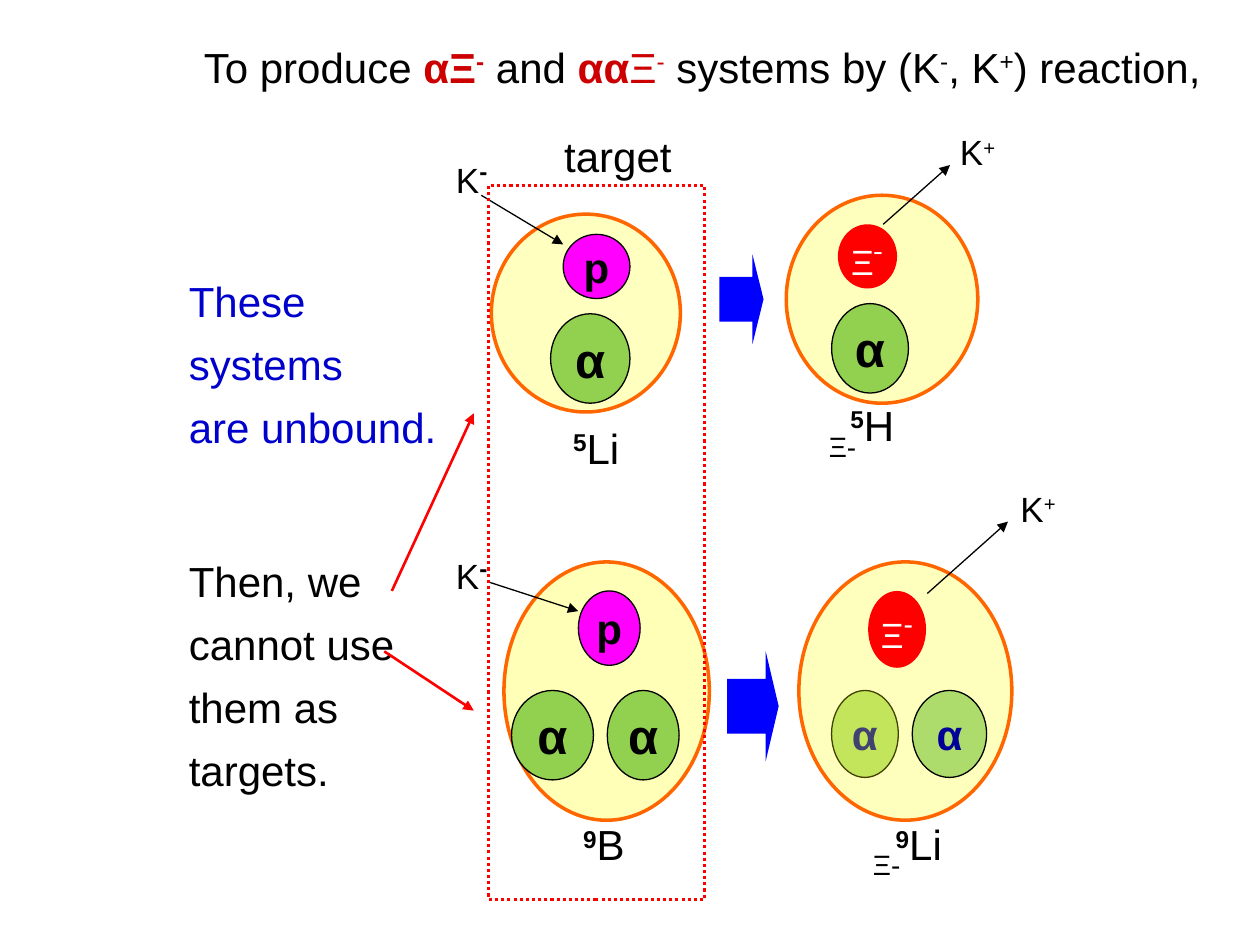
import dataclasses

import pptx
import pptx.dml.color
import pptx.enum.dml
import pptx.enum.shapes
import pptx.enum.text
import pptx.oxml.ns
import pptx.oxml.xmlchemy
import pptx.util

MSO = pptx.enum.shapes.MSO_SHAPE
ALIGN = pptx.enum.text.PP_ALIGN
ANCHOR = pptx.enum.text.MSO_ANCHOR
CELL = pptx.util.Inches(0.1)  # square grid: 100 columns by 75 rows


@dataclasses.dataclass(frozen=True)
class Theme:
    font: str = "Arial"
    minus_font: str = "Noto Sans CJK JP"
    black: str = "000000"
    white: str = "FFFFFF"
    emphasis: str = "CC0000"
    note: str = "0000CC"
    residue: str = "000099"
    red: str = "FF0000"
    blue: str = "0000FF"
    shell: str = "FFFF00"
    shell_line: str = "FF6600"
    alpha: str = "92D050"
    proton: str = "FF00FF"
    small: int = 16
    kaon: int = 20
    body: int = 24
    large: int = 28


T = Theme()


def rgb(code):
    return pptx.dml.color.RGBColor.from_string(code)


def cells(*values):
    return [round(v * CELL) for v in values]


def add_xml(parent, tag, **attributes):
    child = pptx.oxml.xmlchemy.OxmlElement(tag)
    for name, value in attributes.items():
        child.set(name, str(value))
    parent.append(child)


def sup(text, **fmt):
    """A superscript run."""
    return text, dict(fmt, base=30)


def add_run(p, text, size=T.body, color=T.black, bold=False, font=T.font, base=0):
    r = p.add_run()
    r.text = text
    r.font.size = pptx.util.Pt(size)
    r.font.name = font
    r.font.bold = bold
    r.font.color.rgb = rgb(color)
    if base:
        r._r.get_or_add_rPr().set("baseline", str(base * 1000))


def write(tf, paragraphs, align=ALIGN.LEFT, spacing=None, before=(), wrap=False, **fmt):
    """Fill a frame; each paragraph lists strings or (string, format) runs."""
    tf.word_wrap = wrap
    for i, runs in enumerate(paragraphs):
        p = tf.paragraphs[0] if i == 0 else tf.add_paragraph()
        p.alignment = align
        if spacing:
            p.line_spacing = spacing
        if i < len(before):
            p.space_before = pptx.util.Pt(before[i])
        for run in runs:
            text, own = (run, {}) if isinstance(run, str) else run
            add_run(p, text, **{**fmt, **own})


def label(s, box, *runs, **fmt):
    write(s.shapes.add_textbox(*cells(*box)).text_frame, [runs], **fmt)


def shape(s, kind, box, fill=None, opacity=100, line=None, width=0.75):
    sp = s.shapes.add_shape(kind, *cells(*box))
    sp.shadow.inherit = False
    if fill:
        sp.fill.solid()
        sp.fill.fore_color.rgb = rgb(fill)
        if opacity < 100:
            color = sp._element.spPr.find(".//" + pptx.oxml.ns.qn("a:srgbClr"))
            add_xml(color, "a:alpha", val=opacity * 1000)
    else:
        sp.fill.background()
    if line:
        sp.line.color.rgb = rgb(line)
        sp.line.width = pptx.util.Pt(width)
    else:
        sp.line.fill.background()
    return sp


def shell(s, box, opacity):
    shape(s, MSO.OVAL, box, T.shell, opacity, T.shell_line, 2)


def particle(s, box, fill, *runs, opacity=100, line=T.black, **fmt):
    tf = shape(s, MSO.OVAL, box, fill, opacity, line).text_frame
    tf.vertical_anchor = ANCHOR.MIDDLE
    write(tf, [runs], align=ALIGN.CENTER, **fmt)


def alpha(s, box, size=T.large, color=T.black, opacity=100):
    particle(s, box, T.alpha, "α", size=size, color=color, bold=True, opacity=opacity)


def proton(s, box):
    particle(s, box, T.proton, "p", bold=True)


def xi(s, box, minus_font=T.font):
    particle(s, box, T.red, "Ξ", sup("-", size=T.large, font=minus_font),
             line=None, size=T.kaon, color=T.white)


def arrow(s, x1, y1, x2, y2, color=T.black, width=0.75):
    c = s.shapes.add_connector(pptx.enum.shapes.MSO_CONNECTOR.STRAIGHT,
                               *cells(x1, y1, x2, y2))
    c.line.color.rgb = rgb(color)
    c.line.width = pptx.util.Pt(width)
    spPr = c._element.spPr
    add_xml(spPr.find(pptx.oxml.ns.qn("a:ln")), "a:tailEnd", type="triangle")
    add_xml(spPr, "a:effectLst")


def reaction_arrow(s, box):
    sp = shape(s, MSO.RIGHT_ARROW, box, T.blue)
    sp.adjustments[0], sp.adjustments[1] = 0.5, 0.25


def kaon_in(s, box):
    label(s, box, "K", sup("-", size=T.body, bold=True), size=T.kaon, wrap=True)


def kaon_out(s, x, y):
    label(s, (x, y, 5, 4.4), "K", sup("+"), size=T.kaon)


def nuclide(s, box, mass, symbol):
    label(s, box, sup(mass, bold=True), symbol)


def title(s):
    red = dict(color=T.emphasis)
    bold = dict(red, bold=True)
    label(s, (15.2, 2.8, 82.4, 5.1), "To produce ", ("αΞ", bold), sup("-", **bold),
          " and ", ("αα", bold), ("Ξ", red), sup("-", **red), " systems by (K",
          sup("-"), ", K", sup("+"), ") reaction,")


def lithium_reaction(s):
    shell(s, (39, 17, 15, 15.7), 25)
    arrow(s, 38.2, 15.5, 44.7, 19.4)
    kaon_in(s, (35.2, 11.5, 4.7, 4.3))
    nuclide(s, (44.5, 33, 5.9, 5.1), "5", "Li")
    shell(s, (62.4, 15.5, 15.2, 16.5), 26)
    reaction_arrow(s, (57.1, 20.2, 3.5, 7.1))
    arrow(s, 70.1, 17.8, 75.4, 13.1)
    kaon_out(s, 75.2, 9.9)
    nuclide(s, (66.5, 31.2, 5.7, 5.1), "5", "H")
    label(s, (64.8, 33.6, 4.7, 3.7), "Ξ-", size=T.small, wrap=True)
    alpha(s, (43.7, 24.9, 6.3, 7.1))
    proton(s, (44.7, 18.6, 5.3, 5.1))
    alpha(s, (66, 24.1, 6.1, 7.1))
    xi(s, (66.5, 17.8, 4.7, 5.1), T.minus_font)


def boron_reaction(s):
    shell(s, (40, 44.6, 16.3, 20.5), 28)
    arrow(s, 38.8, 46.2, 45.9, 48.5)
    kaon_in(s, (35.2, 43, 5.3, 4.3))
    reaction_arrow(s, (57.7, 51.7, 4.1, 8.7))
    kaon_out(s, 80, 38.2)
    nuclide(s, (45.3, 64.5, 5.5, 5.1), "9", "B")
    nuclide(s, (70.1, 64.5, 5.9, 5.1), "9", "Li")
    label(s, (68.3, 66.8, 4.2, 3.7), "Ξ-", size=T.small)
    residue = dict(size=T.body, color=T.residue, opacity=74)
    alpha(s, (66, 54.8, 5.3, 6.9), **residue)
    shell(s, (63.4, 44.6, 16.9, 20.5), 26)
    arrow(s, 73.6, 47.1, 80, 41.4)
    xi(s, (68.9, 46.9, 4.6, 6.1))
    alpha(s, (72.4, 54.8, 5.9, 6.9), **residue)
    alpha(s, (40.6, 54.8, 6.5, 7.1))
    alpha(s, (48.2, 54.8, 5.7, 7.1))
    proton(s, (45.9, 46.9, 4.9, 5.9))


def target_frame(s):
    sp = shape(s, MSO.RECTANGLE, (38.8, 14.7, 17.1, 56.7), line=T.red, width=1.75)
    sp.line.dash_style = pptx.enum.dml.MSO_LINE.ROUND_DOT
    label(s, (43.8, 9.9, 10.7, 5.1), "target")


def conclusion(s):
    tf = s.shapes.add_textbox(*cells(14, 16.2, 21.8, 47.9)).text_frame
    tf.margin_top = pptx.util.Inches(0.47)
    blue = dict(color=T.note)
    write(tf, [[("These systems", blue)], [("are unbound.", blue)],
               ["Then, we"], ["cannot use them as targets."]],
          wrap=True, spacing=1.25, before=(0, 0, 52, 0))
    for ends in ((30.5, 51.7, 37.6, 56.4), (31.1, 46.9, 37.6, 32.8)):
        arrow(s, *ends, color=T.red, width=1.5)


def main():
    prs = pptx.Presentation()
    prs.slide_width, prs.slide_height = cells(100, 75)
    s = prs.slides.add_slide(prs.slide_layouts[6])
    for part in (title, lithium_reaction, boron_reaction, target_frame, conclusion):
        part(s)
    prs.save("out.pptx")


if __name__ == "__main__":
    main()
